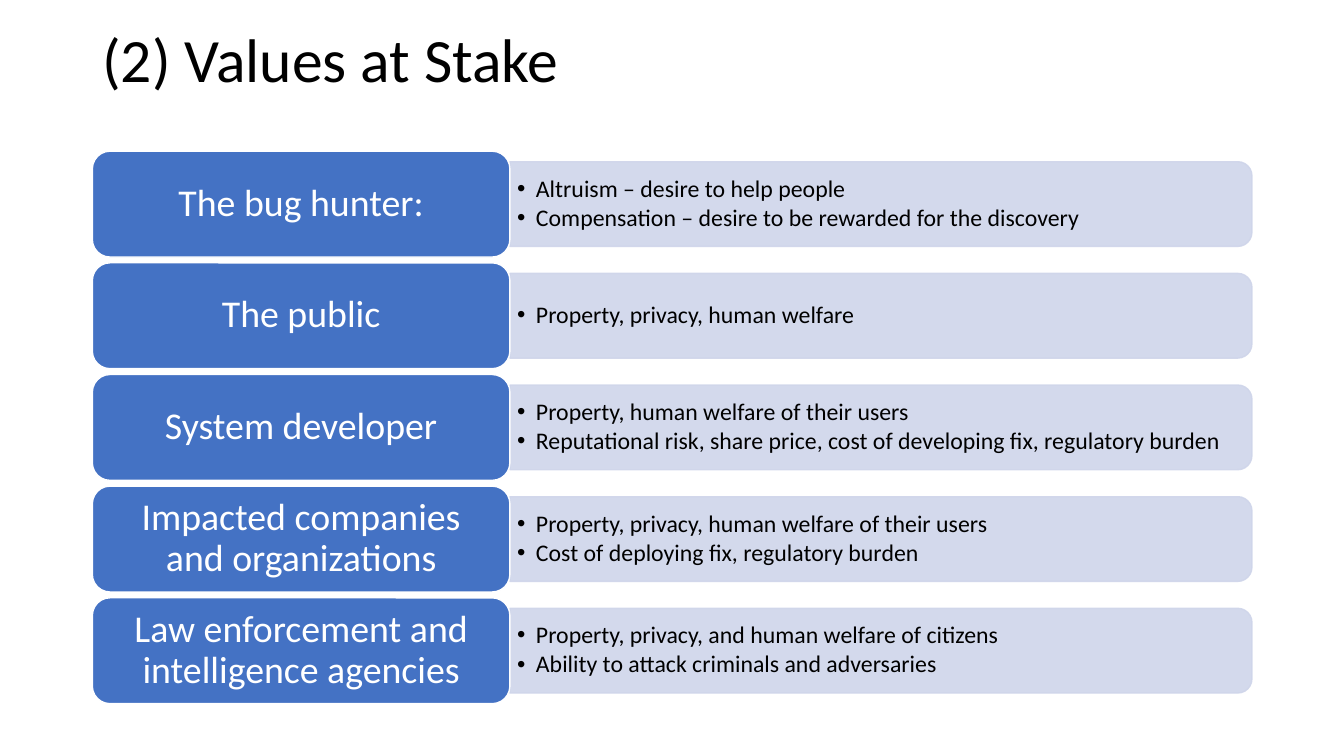
from lxml import etree
from pptx import Presentation
from pptx.dml.color import RGBColor
from pptx.enum.shapes import MSO_SHAPE as Shape
from pptx.enum.text import MSO_ANCHOR as Anchor, PP_ALIGN as Align
from pptx.oxml.ns import qn
from pptx.util import Pt

STAKEHOLDERS = [
    ("The bug hunter:", ["Altruism – desire to help people",
                         "Compensation – desire to be rewarded for the discovery"]),
    ("The public", ["Property, privacy, human welfare"]),
    ("System developer", ["Property, human welfare of their users",
                          "Reputational risk, share price, cost of developing fix, regulatory burden"]),
    ("Impacted companies and organizations", ["Property, privacy, human welfare of their users",
                                              "Cost of deploying fix, regulatory burden"]),
    ("Law enforcement and intelligence agencies", ["Property, privacy, and human welfare of citizens",
                                                   "Ability to attack criminals and adversaries"]),
]

LEFT, TOP, PITCH = 66, 108, 79.75
LABEL_WIDTH, LABEL_HEIGHT = 298.25, 75.6
PANEL_WIDTH, PANEL_HEIGHT = 530, 60.5
VALUES_WIDTH, VALUES_HEIGHT = 527, 54.6


def color(hex_string):
    return RGBColor.from_string(hex_string)


class ValuesSlide:
    FONT = "Calibri"
    BLACK, WHITE, BLUE, PALE = "000000", "FFFFFF", "4472C4", "CFD5EA"

    def __init__(self, slide):
        self.slide = slide

    def fill_text(self, frame, lines, size, ink, margins, **paragraph_format):
        """Fill a text frame with one paragraph per line; margins are (side, top and bottom)."""
        side, edge = margins
        frame_format = {"word_wrap": True, "vertical_anchor": Anchor.MIDDLE,
                        "margin_left": Pt(side), "margin_right": Pt(side),
                        "margin_top": Pt(edge), "margin_bottom": Pt(edge)}
        for name, value in frame_format.items():
            setattr(frame, name, value)
        paragraph_format = {"line_spacing": 0.9, "alignment": Align.LEFT, **paragraph_format}
        for index, line in enumerate(lines):
            paragraph = frame.paragraphs[0] if index == 0 else frame.add_paragraph()
            for name, value in paragraph_format.items():
                setattr(paragraph, name, value)
            run = paragraph.add_run()
            run.text = line
            for name, value in {"name": self.FONT, "size": Pt(size)}.items():
                setattr(run.font, name, value)
            run.font.color.rgb = color(ink)

    def text_box(self, left, top, width, height):
        return self.slide.shapes.add_textbox(Pt(left), Pt(top), Pt(width), Pt(height)).text_frame

    def box(self, kind, left, top, width, height, fill, line):
        box = self.slide.shapes.add_shape(kind, Pt(left), Pt(top), Pt(width), Pt(height))
        box.shadow.inherit = False
        box.fill.solid()
        box.fill.fore_color.rgb = color(fill)
        box.line.color.rgb = color(line)
        box.line.width = Pt(1)
        return box

    def title(self, text):
        self.fill_text(self.text_box(LEFT, 11, 828, 67.5), [text], 44, self.BLACK, (7.2, 3.6))

    def panel(self, left, middle):
        """Pale bar rounded on its right end: a tall shape turned by a quarter."""
        panel = self.box(Shape.ROUND_2_SAME_RECTANGLE,
                         left + (PANEL_WIDTH - PANEL_HEIGHT) / 2, middle - PANEL_WIDTH / 2,
                         PANEL_HEIGHT, PANEL_WIDTH, self.PALE, self.PALE)
        panel.rotation = 90
        for rgb in panel._element.spPr.iter(qn("a:srgbClr")):
            etree.SubElement(rgb, qn("a:alpha"), val="90000")

    def values(self, lines, left, middle):
        frame = self.text_box(left, middle - VALUES_HEIGHT / 2, VALUES_WIDTH, VALUES_HEIGHT)
        self.fill_text(frame, lines, 17, self.BLACK, (5.1, 2.6), level=1, space_after=Pt(2.5))
        for paragraph in frame.paragraphs:
            properties = paragraph._p.get_or_add_pPr()
            properties.set("marL", str(Pt(13.5)))
            properties.set("indent", str(Pt(-13.5)))
            etree.SubElement(properties, qn("a:buFont"), typeface="Arial")
            etree.SubElement(properties, qn("a:buChar"), char="•")

    def label(self, text, top):
        label = self.box(Shape.ROUNDED_RECTANGLE, LEFT, top, LABEL_WIDTH, LABEL_HEIGHT,
                         self.BLUE, self.WHITE)
        self.fill_text(label.text_frame, [text], 27, self.WHITE, (8.1, 4.1), alignment=Align.CENTER)

    def row(self, index, stakeholder, values):
        top = TOP + index * PITCH
        middle = top + LABEL_HEIGHT / 2
        self.panel(LEFT + LABEL_WIDTH, middle)
        self.values(values, LEFT + LABEL_WIDTH, middle)
        self.label(stakeholder, top)


def main():
    deck = Presentation()
    deck.slide_width, deck.slide_height = Pt(960), Pt(540)
    stakes = ValuesSlide(deck.slides.add_slide(deck.slide_layouts[6]))
    stakes.title("(2) Values at Stake")
    for index, (stakeholder, values) in enumerate(STAKEHOLDERS):
        stakes.row(index, stakeholder, values)
    deck.save("out.pptx")


if __name__ == "__main__":
    main()
